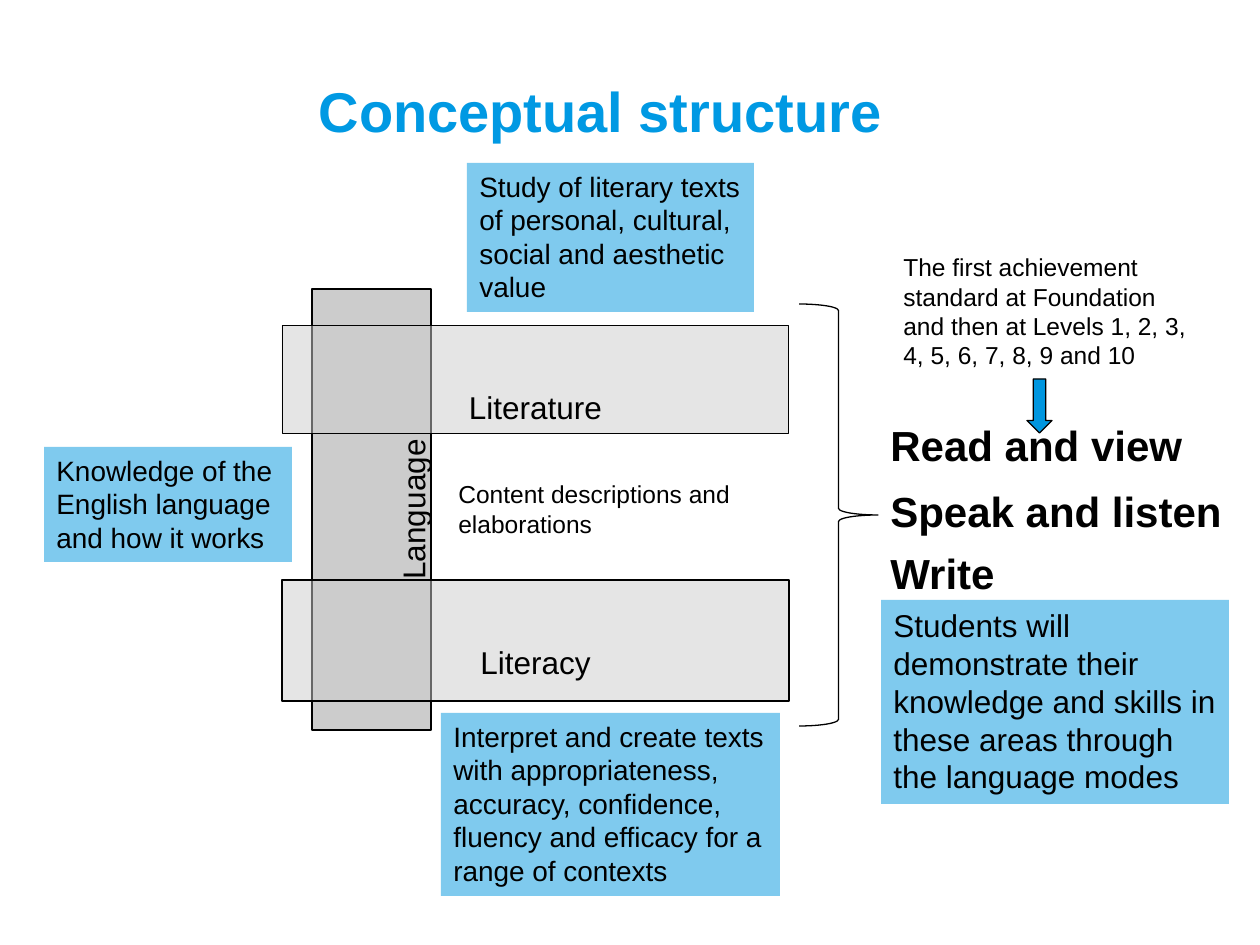
from lxml import etree
from pptx import Presentation
from pptx.dml.color import RGBColor
from pptx.enum.shapes import MSO_SHAPE
from pptx.enum.text import MSO_ANCHOR, PP_ALIGN
from pptx.oxml.ns import qn
from pptx.util import Emu, Pt

RECTANGLE = MSO_SHAPE.RECTANGLE
BRACE = MSO_SHAPE.RIGHT_BRACE
DOWN_ARROW = MSO_SHAPE.DOWN_ARROW
LEFT, CENTER = PP_ALIGN.LEFT, PP_ALIGN.CENTER
TOP, MIDDLE = MSO_ANCHOR.TOP, MSO_ANCHOR.MIDDLE

PX_PER_INCH = 126
FONT = "Arial"
COLORS = {
    "title": "0099E3",
    "note": "0096DF",
    "strand": "CCCCCC",
    "ink": "000000",
}


def px(length):
    return Emu(round(length * 914400 / PX_PER_INCH))


class ConceptSlide:
    def __init__(self, presentation):
        self.slide = presentation.slides.add_slide(presentation.slide_layouts[6])

    def color(self, name):
        return RGBColor.from_string(COLORS[name])

    def set_text(self, shape, words, size, color="ink", bold=False,
                 align=LEFT, anchor=TOP, spacing=None):
        frame = shape.text_frame
        frame.word_wrap = True
        frame.vertical_anchor = anchor
        paragraph = frame.paragraphs[0]
        paragraph.text = words
        paragraph.alignment = align
        if spacing:
            paragraph.line_spacing = spacing
        font = paragraph.font
        font.name, font.size, font.bold = FONT, Pt(size), bold
        font.color.rgb = self.color(color)

    def text(self, box, words, size, **style):
        label = self.slide.shapes.add_textbox(*map(px, box))
        self.set_text(label, words, size, **style)

    def shape(self, kind, box, fill=None, opacity=100, line=None):
        shape = self.slide.shapes.add_shape(kind, *map(px, box))
        shape.shadow.inherit = False
        if fill:
            shape.fill.solid()
            shape.fill.fore_color.rgb = self.color(fill)
            if opacity < 100:
                tint = shape.element.spPr.find(qn("a:solidFill"))[0]
                etree.SubElement(tint, qn("a:alpha"), val=str(opacity * 1000))
        else:
            shape.fill.background()
        if line:
            shape.line.color.rgb = self.color("ink")
            shape.line.width = Pt(line)
        else:
            shape.line.fill.background()
        return shape

    def strand(self, box, words, line, spacing, opacity=100,
               rotation=0, upward=False, anchor=TOP):
        bar = self.shape(RECTANGLE, box, "strand", opacity, line)
        bar.rotation = rotation
        self.set_text(bar, words, 18, align=CENTER, anchor=anchor,
                      spacing=spacing)
        if upward:
            bar.element.txBody.find(qn("a:bodyPr")).set("vert", "vert270")

    def note(self, box, words, size=16):
        self.set_text(self.shape(RECTANGLE, box, "note", 50), words, size)


def main():
    presentation = Presentation()
    presentation.slide_width = px(1260)
    presentation.slide_height = px(945)
    concept = ConceptSlide(presentation)

    concept.text((44, 76, 1113, 69), "Conceptual structure", 32,
                 color="title", bold=True, align=CENTER, anchor=MIDDLE)

    concept.strand((312, 289, 119, 441), "Language", 1, 3, upward=True)
    concept.strand((475, 387, 121, 507), "Literacy", 1, 2.5, opacity=50,
                   rotation=90, upward=True)

    for mode, top, width in (("Read and view", 413, 348),
                             ("Speak and listen", 479, 367),
                             ("Write", 541, 297)):
        concept.text((878, top, width, 63), mode, 24, bold=True)

    concept.shape(BRACE, (799, 304, 79, 422), line=0.75)
    concept.strand((282, 325, 507, 108), "Literature", 0.5, 2.5, opacity=50,
                   anchor=MIDDLE)

    concept.note((44, 447, 248, 115),
                 "Knowledge of the English language and how it works")
    concept.note((441, 713, 339, 183),
                 "Interpret and create texts with appropriateness, accuracy, "
                 "confidence, fluency and efficacy for a range of contexts")
    concept.note((467, 163, 287, 149),
                 "Study of literary texts of personal, cultural, social and "
                 "aesthetic value")
    concept.note((881, 600, 348, 204),
                 "Students will demonstrate their knowledge and skills in "
                 "these areas through the language modes", 18)

    concept.text((891, 246, 315, 131),
                 "The first achievement standard at Foundation and then at "
                 "Levels 1, 2, 3, 4, 5, 6, 7, 8, 9 and 10", 14)
    concept.text((446, 473, 343, 72),
                 "Content descriptions and elaborations", 14)
    concept.shape(DOWN_ARROW, (1027, 379, 25, 54), "note", line=0.75)

    presentation.save("out.pptx")


if __name__ == "__main__":
    main()
